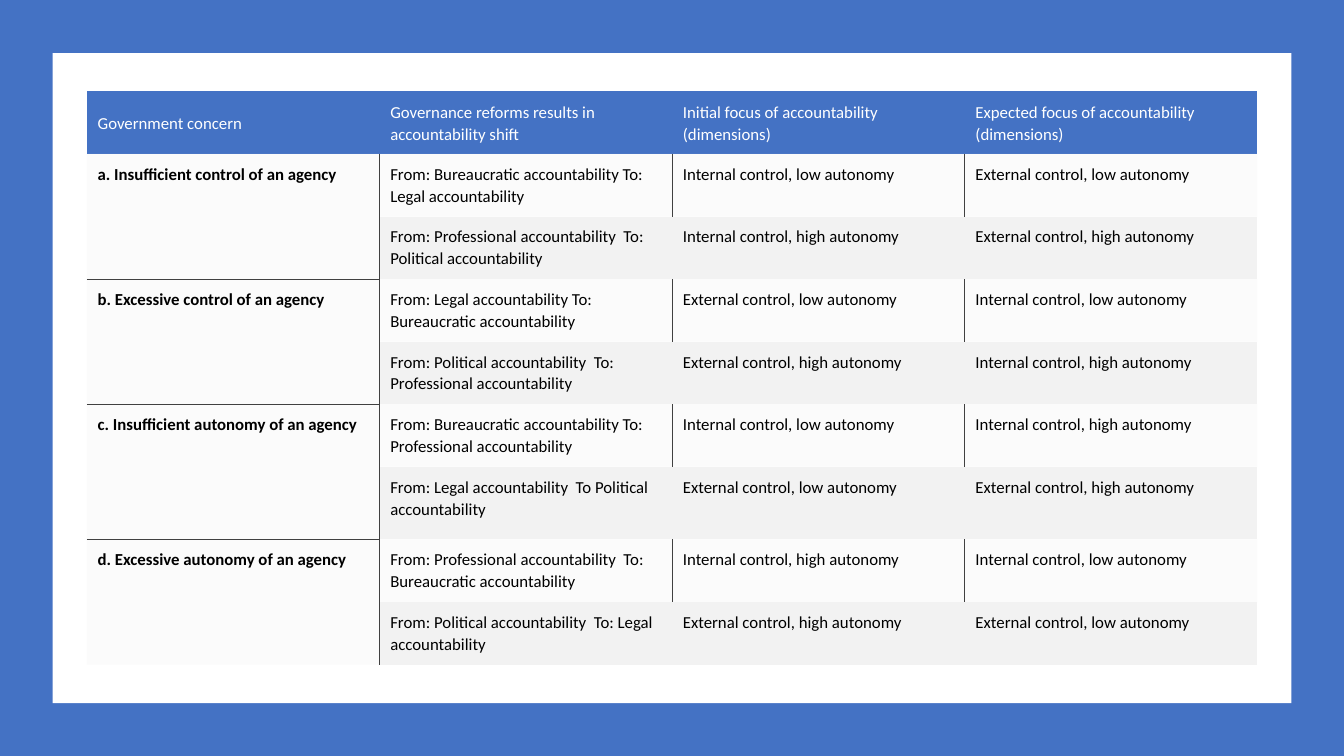
"""Builds a slide with a table of government concerns and accountability shifts."""
import pptx
import pptx.dml.color
import pptx.enum.shapes
import pptx.enum.text
import pptx.oxml.ns
import pptx.util
from lxml import etree

Pt = pptx.util.Pt
RGBColor = pptx.dml.color.RGBColor
qn = pptx.oxml.ns.qn

HEADINGS = (
    "Government concern",
    "Governance reforms results in accountability shift",
    "Initial focus of accountability (dimensions)",
    "Expected focus of accountability (dimensions)",
)
CONCERNS = (
    ("a. Insufficient control of an agency", (
        ("From: Bureaucratic accountability To: Legal accountability",
         "Internal control, low autonomy", "External control, low autonomy"),
        ("From: Professional accountability  To: Political accountability",
         "Internal control, high autonomy", "External control, high autonomy"))),
    ("b. Excessive control of an agency", (
        ("From: Legal accountability To: Bureaucratic accountability",
         "External control, low autonomy", "Internal control, low autonomy"),
        ("From: Political accountability  To: Professional accountability",
         "External control, high autonomy", "Internal control, high autonomy"))),
    ("c. Insufficient autonomy of an agency", (
        ("From: Bureaucratic accountability To: Professional accountability",
         "Internal control, low autonomy", "Internal control, high autonomy"),
        ("From: Legal accountability  To Political accountability",
         "External control, low autonomy", "External control, high autonomy"))),
    ("d. Excessive autonomy of an agency", (
        ("From: Professional accountability  To: Bureaucratic accountability",
         "Internal control, high autonomy", "Internal control, low autonomy"),
        ("From: Political accountability  To: Legal accountability",
         "External control, high autonomy", "External control, low autonomy"))),
)

BLUE = RGBColor(0x44, 0x72, 0xC4)
WHITE = RGBColor(0xFF, 0xFF, 0xFF)
BLACK = RGBColor(0, 0, 0)
GREY = RGBColor(0xF2, 0xF2, 0xF2)
RULE = RGBColor(0x40, 0x40, 0x40)

SLIDE_WIDTH, SLIDE_HEIGHT = 960, 540
COLUMN_WIDTH = 209
ROW_HEIGHT, TALL_ROW_HEIGHT, TALL_ROW = 44.7, 52, 6
ROW_COUNT = 1 + 2 * len(CONCERNS)
TABLE_HEIGHT = ROW_HEIGHT * (ROW_COUNT - 1) + TALL_ROW_HEIGHT
NO_GRID_STYLE = "{2D5ABB26-0587-4C30-8999-92F81FD0307C}"


def add_panel(slide, left, top, width, height, color):
    panel = slide.shapes.add_shape(
        pptx.enum.shapes.MSO_SHAPE.RECTANGLE, Pt(left), Pt(top), Pt(width), Pt(height))
    panel.shadow.inherit = False
    panel.fill.solid()
    panel.fill.fore_color.rgb = color
    panel.line.fill.background()


def write_cell(cell, text, fill, color=BLACK, bold=False, sides="", opacity=100):
    properties = cell._tc.get_or_add_tcPr()
    for side in sides:
        border = etree.SubElement(properties, qn("a:ln" + side), w=str(Pt(0.5)))
        paint = etree.SubElement(border, qn("a:solidFill"))
        etree.SubElement(paint, qn("a:srgbClr"), val=str(RULE))
    cell.fill.solid()
    cell.fill.fore_color.rgb = fill
    if opacity < 100:
        shade = properties.find(qn("a:solidFill")).find(qn("a:srgbClr"))
        etree.SubElement(shade, qn("a:alpha"), val=str(opacity * 1000))
    cell.margin_left, cell.margin_right = Pt(7.8), Pt(3)
    cell.margin_top = cell.margin_bottom = Pt(6.5)
    cell.text_frame.text = text
    paragraph = cell.text_frame.paragraphs[0]
    paragraph.line_spacing = 1.07
    paragraph.space_after = Pt(8)
    font = paragraph.runs[0].font
    font.name, font.size, font.bold = "Calibri", Pt(12), bold
    font.color.rgb = color


def add_accountability_table(slide):
    frame = slide.shapes.add_table(
        ROW_COUNT, len(HEADINGS), Pt(62), Pt(65.3),
        Pt(COLUMN_WIDTH * len(HEADINGS)), Pt(TABLE_HEIGHT))
    table = frame.table
    table.horz_banding = False
    table._tbl.tblPr.find(qn("a:tableStyleId")).text = NO_GRID_STYLE
    for column in table.columns:
        column.width = Pt(COLUMN_WIDTH)
    for index, row in enumerate(table.rows):
        row.height = Pt(TALL_ROW_HEIGHT if index == TALL_ROW else ROW_HEIGHT)

    for column, heading in enumerate(HEADINGS):
        cell = table.cell(0, column)
        write_cell(cell, heading, BLUE, WHITE)
        cell.vertical_anchor = pptx.enum.text.MSO_ANCHOR.MIDDLE

    last = len(CONCERNS) - 1
    for index, (concern, shifts) in enumerate(CONCERNS):
        top = 1 + 2 * index
        label = table.cell(top, 0)
        label.merge(table.cell(top + 1, 0))
        sides = "R" + ("T" if index > 0 else "") + ("B" if index < last else "")
        write_cell(label, concern, GREY, bold=True, sides=sides, opacity=30)
        for column, text in enumerate(shifts[0], 1):
            sides = "LR" if column < len(shifts[0]) else "L"
            write_cell(table.cell(top, column), text, GREY, sides=sides, opacity=30)
        for column, text in enumerate(shifts[1], 1):
            write_cell(table.cell(top + 1, column), text, GREY)


def main():
    deck = pptx.Presentation()
    deck.slide_width, deck.slide_height = Pt(SLIDE_WIDTH), Pt(SLIDE_HEIGHT)
    slide = deck.slides.add_slide(deck.slide_layouts[6])
    add_panel(slide, 0, 0, SLIDE_WIDTH, SLIDE_HEIGHT, BLUE)
    add_panel(slide, 37.5, 38, 885, 464.2, WHITE)
    add_accountability_table(slide)
    deck.save("out.pptx")


if __name__ == "__main__":
    main()
